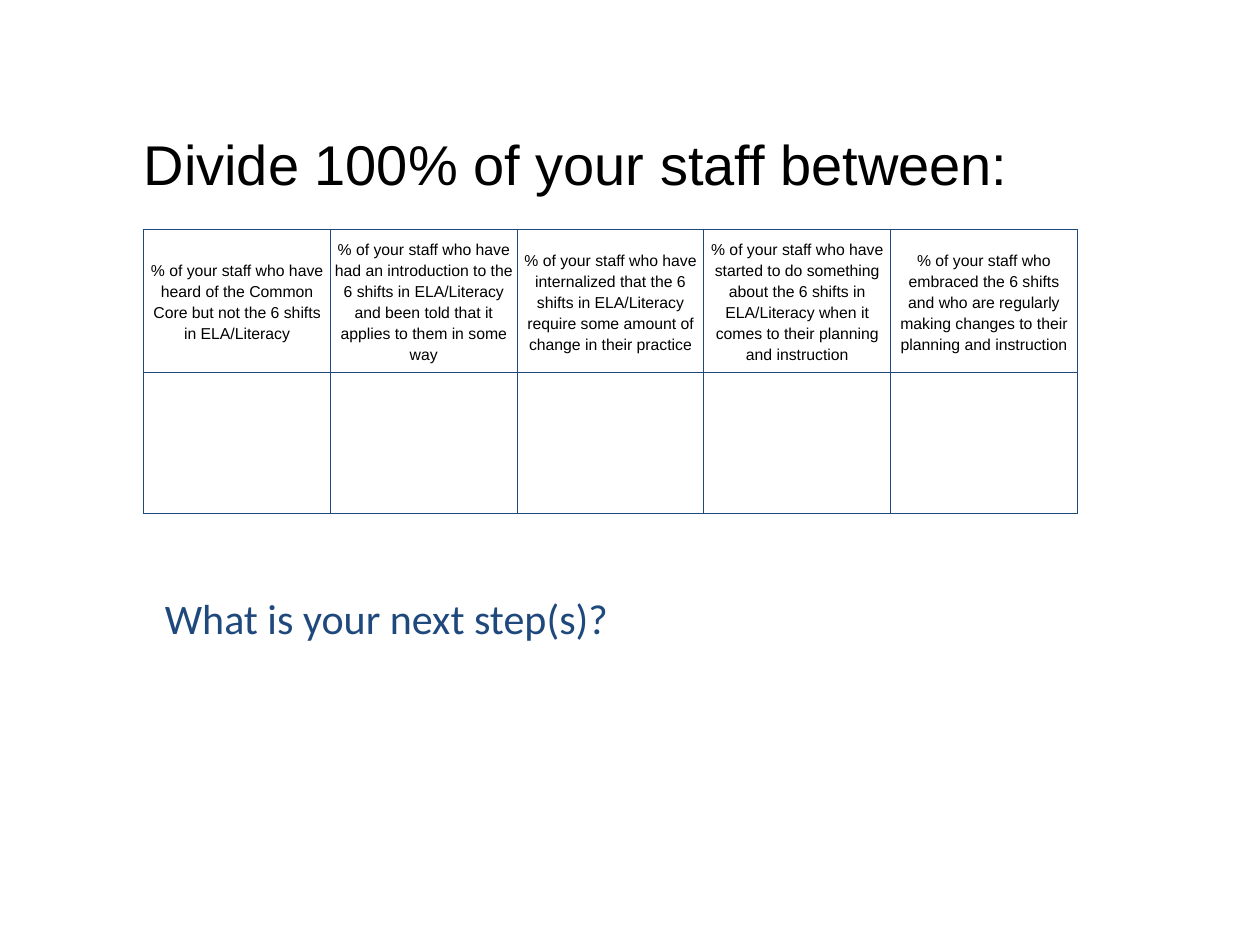
from dataclasses import dataclass

from lxml import etree
from pptx import Presentation
from pptx.dml.color import RGBColor
from pptx.enum.text import MSO_ANCHOR, PP_ALIGN
from pptx.oxml.ns import qn
from pptx.util import Inches, Pt

MIDDLE = MSO_ANCHOR.MIDDLE
CENTER = PP_ALIGN.CENTER

STAGES = [
    "% of your staff who have heard of the Common Core but not the 6 shifts in ELA/Literacy",
    "% of your staff who have had an introduction to the 6 shifts in ELA/Literacy "
    "and been told that it applies to them in some way",
    "% of your staff who have internalized that the 6 shifts in ELA/Literacy "
    "require some amount of change in their practice",
    "% of your staff who have started to do something about the 6 shifts in ELA/Literacy "
    "when it comes to their planning and instruction",
    "% of your staff who embraced the 6 shifts and who are regularly making changes "
    "to their planning and instruction",
]


@dataclass(frozen=True)
class Theme:
    """Colours, fonts and sizes of the slide."""

    ink: str = "000000"
    blue: str = "1F497D"
    sans: str = "Arial"
    body: str = "Calibri"
    title: int = 32
    prompt: int = 24
    cell: int = 9
    rule: float = 0.5


class Deck:
    """Adds styled elements, placed by shares of the slide's size."""

    def __init__(self, theme, width=10, height=7.5):
        """Open a blank slide of the given size in inches."""
        self.theme = theme
        self.prs = Presentation()
        self.prs.slide_width = Inches(width)
        self.prs.slide_height = Inches(height)
        self.slide = self.prs.slides.add_slide(self.prs.slide_layouts[6])

    def area(self, left, top, width, height):
        """Turn shares of the slide into lengths."""
        wide, high = self.prs.slide_width, self.prs.slide_height
        return int(left * wide), int(top * high), int(width * wide), int(height * high)

    def style(self, para, font, size, color):
        """Format every run of a paragraph."""
        for run in para.runs:
            run.font.name = font
            run.font.size = Pt(size)
            run.font.color.rgb = RGBColor.from_string(color)

    def text(self, words, box, font, size, color, inset=0.1):
        """Add one line of text with a small indent."""
        frame = self.slide.shapes.add_textbox(*self.area(*box)).text_frame
        frame.word_wrap = True
        frame.margin_left = Inches(inset)
        para = frame.paragraphs[0]
        para.text = words
        para.space_before = Pt(4)
        para._p.get_or_add_pPr().set("marL", str(Inches(0.07)))
        self.style(para, font, size, color)

    def edge(self, cell):
        """Draw thin rules on all four sides of a cell."""
        props = cell._tc.get_or_add_tcPr()
        for spot, side in enumerate(("lnL", "lnR", "lnT", "lnB")):
            line = etree.Element(qn(f"a:{side}"), w=str(Pt(self.theme.rule)))
            fill = etree.SubElement(line, qn("a:solidFill"))
            etree.SubElement(fill, qn("a:srgbClr"), val=self.theme.blue)
            props.insert(spot, line)

    def table(self, heads, box, rows=2):
        """Add a ruled grid with a row of heads over blank cells."""
        grid = self.slide.shapes.add_table(rows, len(heads), *self.area(*box)).table
        grid.first_row = grid.horz_banding = False
        for cell in grid.iter_cells():
            cell.fill.background()
            self.edge(cell)
        for col, words in enumerate(heads):
            cell = grid.cell(0, col)
            cell.vertical_anchor = MIDDLE
            cell.margin_left = cell.margin_right = Inches(0.03)
            cell.margin_top = cell.margin_bottom = Inches(0.03)
            para = cell.text_frame.paragraphs[0]
            para.text = words
            para.alignment = CENTER
            para.line_spacing = 1.19
            para.space_after = Pt(6)
            self.style(para, self.theme.sans, self.theme.cell, self.theme.ink)


def main():
    """Build the staff survey slide."""
    look = Theme()
    deck = Deck(look)
    deck.text("Divide 100% of your staff between:", (0.1, 0.13, 0.78, 0.1),
              look.sans, look.title, look.ink, inset=0.07)
    deck.table(STAGES, (0.114, 0.243, 0.741, 0.298))
    deck.text("What is your next step(s)?", (0.114, 0.62, 0.78, 0.1),
              look.body, look.prompt, look.blue)
    deck.prs.save("out.pptx")


if __name__ == "__main__":
    main()
